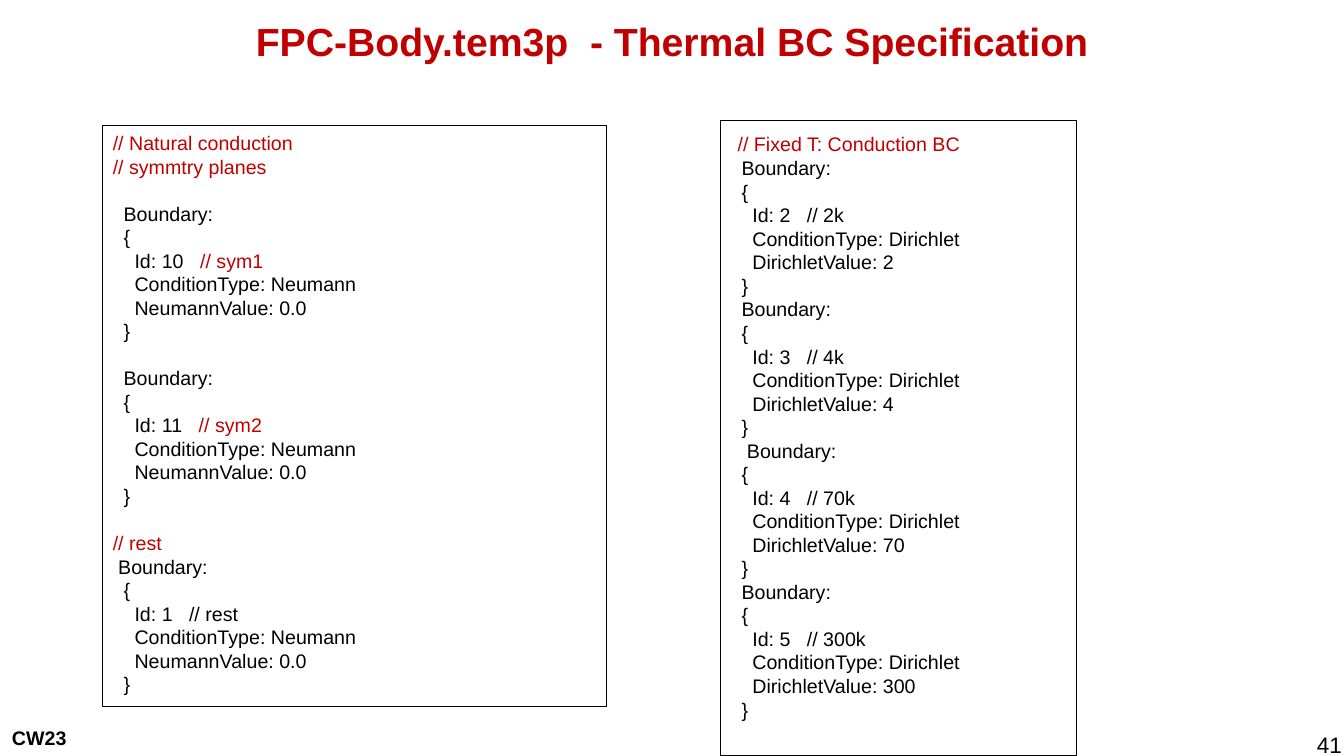
from pptx import Presentation
from pptx.dml.color import RGBColor
from pptx.enum.shapes import MSO_SHAPE
from pptx.enum.text import MSO_ANCHOR, PP_ALIGN
from pptx.util import Pt

RECTANGLE = MSO_SHAPE.RECTANGLE
TOP, MIDDLE = MSO_ANCHOR.TOP, MSO_ANCHOR.MIDDLE
LEFT, CENTER, RIGHT = PP_ALIGN.LEFT, PP_ALIGN.CENTER, PP_ALIGN.RIGHT

COLORS = {"text": "000000", "accent": "C00000"}
CODE_SIZE = 14
LINE_RATIO = 1.202


def boundary(number, note, kind, value, indent="  ", note_color="text"):
    return [
        [(f"{indent}Boundary:", "text")],
        [("  {", "text")],
        [(f"    Id: {number}   ", "text"), (f"// {note}", note_color)],
        [(f"    ConditionType: {kind}", "text")],
        [(f"    {kind}Value: {value}", "text")],
        [("  }", "text")],
    ]


class SlideBuilder:
    font_name = "Arial"

    def __init__(self, deck):
        self.page = deck.slides.add_slide(deck.slide_layouts[5])

    def apply(self, target, values):
        for name, value in values.items():
            setattr(target, name, value)

    def place(self, shape, bounds):
        names = ("left", "top", "width", "height")
        self.apply(shape, dict(zip(names, map(Pt, bounds))))

    def add_span(self, para, text, color="text", size=CODE_SIZE, bold=False):
        span = para.add_run()
        span.text = text
        self.apply(span.font, {"name": self.font_name, "size": Pt(size), "bold": bold})
        span.font.color.rgb = RGBColor.from_string(COLORS[color])

    def title(self, bounds, text):
        shape = self.page.shapes.title
        self.place(shape, bounds)
        self.apply(shape.text_frame, {"vertical_anchor": MIDDLE, "word_wrap": True})
        para = shape.text_frame.paragraphs[0]
        para.alignment = CENTER
        self.add_span(para, text, "accent", 28, True)

    def label(self, bounds, text, size, bold=False, alignment=LEFT):
        box = self.page.shapes.add_textbox(*map(Pt, bounds))
        box.text_frame.word_wrap = True
        para = box.text_frame.paragraphs[0]
        para.alignment = alignment
        self.add_span(para, text, size=size, bold=bold)

    def code_box(self, bounds, blocks):
        box = self.page.shapes.add_shape(RECTANGLE, *map(Pt, bounds))
        box.shadow.inherit = False
        box.fill.background()
        box.line.color.rgb = RGBColor.from_string(COLORS["text"])
        box.line.width = Pt(0.75)
        frame = box.text_frame
        self.apply(frame, {"vertical_anchor": TOP, "word_wrap": True})
        para = frame.paragraphs[0]
        for block_index, lines in enumerate(blocks):
            for line_index, spans in enumerate(lines):
                first_line = line_index == 0
                if block_index or line_index:
                    para = frame.add_paragraph()
                gap = CODE_SIZE * LINE_RATIO if block_index and first_line else 0
                size = max(span[2] if len(span) > 2 else CODE_SIZE for span in spans)
                self.apply(para, {
                    "alignment": LEFT,
                    "line_spacing": Pt(size * LINE_RATIO),
                    "space_before": Pt(gap),
                })
                for span in spans:
                    self.add_span(para, *span)


def main():
    deck = Presentation()
    deck.slide_width, deck.slide_height = Pt(960), Pt(540)
    slide = SlideBuilder(deck)

    slide.label((1.5, 514.8, 130, 24.5), "CW23", 14, bold=True)
    slide.title((120, 0, 720, 59), "FPC-Body.tem3p  - Thermal BC Specification")

    fixed = [[(" ", "text", 18), ("// Fixed T: Conduction BC", "accent")]]
    for number, value in ((2, 2), (3, 4), (4, 70), (5, 300)):
        indent = "   " if number == 4 else "  "
        fixed += boundary(number, f"{value}k", "Dirichlet", value, indent)
    slide.code_box((514.8, 86.4, 254, 453.6), [fixed])

    natural = [[[("// Natural conduction", "accent")], [("// symmtry planes", "accent")]]]
    for number, note in ((10, "sym1"), (11, "sym2")):
        natural.append(boundary(number, note, "Neumann", "0.0", note_color="accent"))
    rest = boundary(1, "rest", "Neumann", "0.0", indent=" ")
    natural.append([[("// rest", "accent")]] + rest)
    slide.code_box((73.5, 90, 360, 414.7), natural)

    slide.label((897.8, 519, 67.7, 21), "41", 16, alignment=RIGHT)
    deck.save("out.pptx")


if __name__ == "__main__":
    main()
